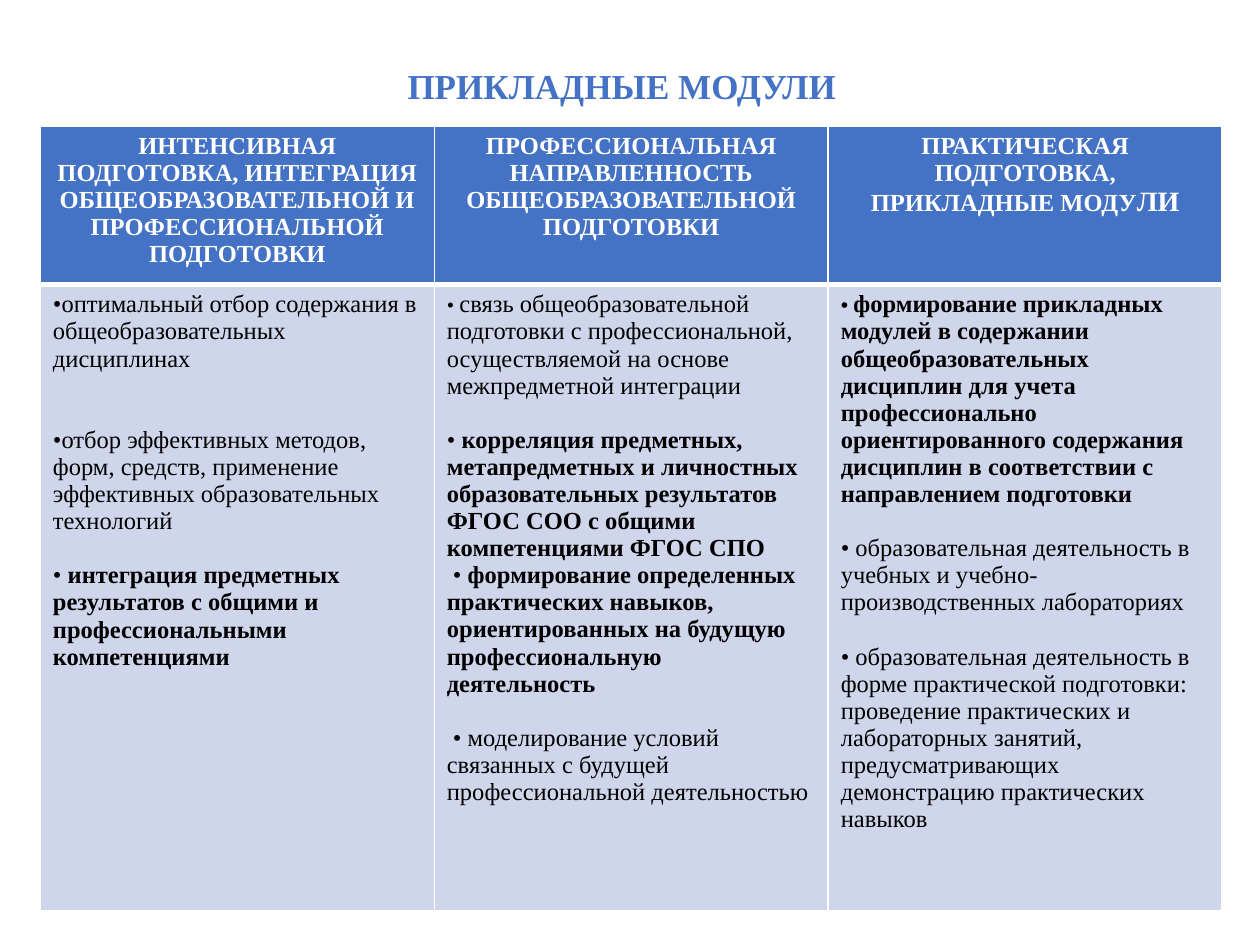
from typing import NamedTuple

from lxml import etree
from pptx import Presentation
from pptx.dml.color import RGBColor
from pptx.enum.text import MSO_ANCHOR, PP_ALIGN
from pptx.oxml.ns import qn
from pptx.util import Inches, Pt

CENTER, LEFT = PP_ALIGN.CENTER, PP_ALIGN.LEFT
MIDDLE = MSO_ANCHOR.MIDDLE
FONT = "Times New Roman"
COLORS = {"accent": "4472C4", "band": "CFD5EA", "white": "FFFFFF", "black": "000000"}
TITLE_ONLY = 5
LINE = 15.5  # height of one 14 pt line, in points


class Run(NamedTuple):
    text: str
    bold: bool = False
    size: float = 14


class Para(NamedTuple):
    runs: list[Run]
    gap_lines: int = 0


class Column(NamedTuple):
    header: list[Run]
    items: list[Para]


COLUMNS = [
    Column(
        [Run("ИНТЕНСИВНАЯ ПОДГОТОВКА, ИНТЕГРАЦИЯ ОБЩЕОБРАЗОВАТЕЛЬНОЙ И "
             "ПРОФЕССИОНАЛЬНОЙ ПОДГОТОВКИ", True)],
        [
            Para([Run("•оптимальный отбор содержания в общеобразовательных дисциплинах")]),
            Para([Run("•отбор эффективных методов, форм, средств, применение "
                      "эффективных образовательных технологий")], 2),
            Para([Run("• "),
                  Run("интеграция предметных результатов с общими и "
                      "профессиональными компетенциями", True)], 1),
        ],
    ),
    Column(
        [Run("ПРОФЕССИОНАЛЬНАЯ НАПРАВЛЕННОСТЬ ОБЩЕОБРАЗОВАТЕЛЬНОЙ ПОДГОТОВКИ", True)],
        [
            Para([Run("• ", size=12),
                  Run("связь общеобразовательной подготовки с профессиональной, "
                      "осуществляемой на основе межпредметной интеграции")]),
            Para([Run("• "),
                  Run("корреляция предметных, метапредметных и личностных "
                      "образовательных результатов ФГОС СОО с общими "
                      "компетенциями ФГОС СПО", True)], 1),
            Para([Run(" • "),
                  Run("формирование определенных практических навыков, "
                      "ориентированных на будущую профессиональную деятельность", True)]),
            Para([Run(" • моделирование условий связанных с будущей "
                      "профессиональной деятельностью")], 1),
        ],
    ),
    Column(
        [Run("ПРАКТИЧЕСКАЯ ПОДГОТОВКА, ПРИКЛАДНЫЕ МОДУ", True), Run("ЛИ", True, 16)],
        [
            Para([Run("• ", True, 12),
                  Run("формирование прикладных модулей в содержании "
                      "общеобразовательных дисциплин для учета профессионально "
                      "ориентированного содержания дисциплин в соответствии с "
                      "направлением подготовки", True)]),
            Para([Run("• образовательная деятельность в учебных и "
                      "учебно-производственных лабораториях")], 1),
            Para([Run("• образовательная деятельность в форме практической подготовки: "
                      "проведение практических и лабораторных занятий, "
                      "предусматривающих демонстрацию практических навыков")], 1),
        ],
    ),
]


def add_runs(p, runs: list[Run], color: str) -> None:
    for run in runs:
        r = p.add_run()
        r.text = run.text
        r.font.name = FONT
        r.font.size = Pt(run.size)
        r.font.bold = run.bold
        r.font.color.rgb = RGBColor.from_string(COLORS[color])


def set_borders(cell, top: float, bottom: float) -> None:
    tcPr = cell._tc.get_or_add_tcPr()
    for side, width in (("L", 1), ("R", 1), ("T", top), ("B", bottom)):
        ln = etree.SubElement(tcPr, qn(f"a:ln{side}"), w=str(Pt(width)))
        fill = etree.SubElement(ln, qn("a:solidFill"))
        etree.SubElement(fill, qn("a:srgbClr"), val=COLORS["white"])


def fill_cell(cell, paras: list[Para], align, text_color: str, fill: str) -> None:
    cell.fill.solid()
    cell.fill.fore_color.rgb = RGBColor.from_string(COLORS[fill])
    tf = cell.text_frame
    for i, para in enumerate(paras):
        p = tf.add_paragraph() if i else tf.paragraphs[0]
        p.alignment = align
        p.space_before = Pt(para.gap_lines * LINE)
        add_runs(p, para.runs, text_color)


def main() -> None:
    prs = Presentation()
    prs.slide_width, prs.slide_height = Inches(10), Inches(7.5)
    s = prs.slides.add_slide(prs.slide_layouts[TITLE_ONLY])

    # Title
    title = s.shapes.title
    title.left, title.top = Inches(3.12), Inches(0.46)
    title.width, title.height = Inches(3.63), Inches(0.44)
    tf = title.text_frame
    tf.word_wrap = False
    tf.vertical_anchor = MIDDLE
    p = tf.paragraphs[0]
    p.alignment = CENTER
    add_runs(p, [Run("ПРИКЛАДНЫЕ МОДУЛИ", True, 20)], "accent")

    # Table
    width, heights = Inches(9.38), (Inches(1.26), Inches(4.97))
    table = s.shapes.add_table(2, len(COLUMNS), Inches(0.32), Inches(1),
                               width, sum(heights)).table
    for row, height in zip(table.rows, heights):
        row.height = height
    for i, column in enumerate(COLUMNS):
        table.columns[i].width = width // len(COLUMNS)
        head, body = table.cell(0, i), table.cell(1, i)
        set_borders(head, top=1, bottom=3)
        set_borders(body, top=3, bottom=1)
        fill_cell(head, [Para(column.header)], CENTER, "white", "accent")
        fill_cell(body, column.items, LEFT, "black", "band")

    prs.save("out.pptx")


if __name__ == "__main__":
    main()
